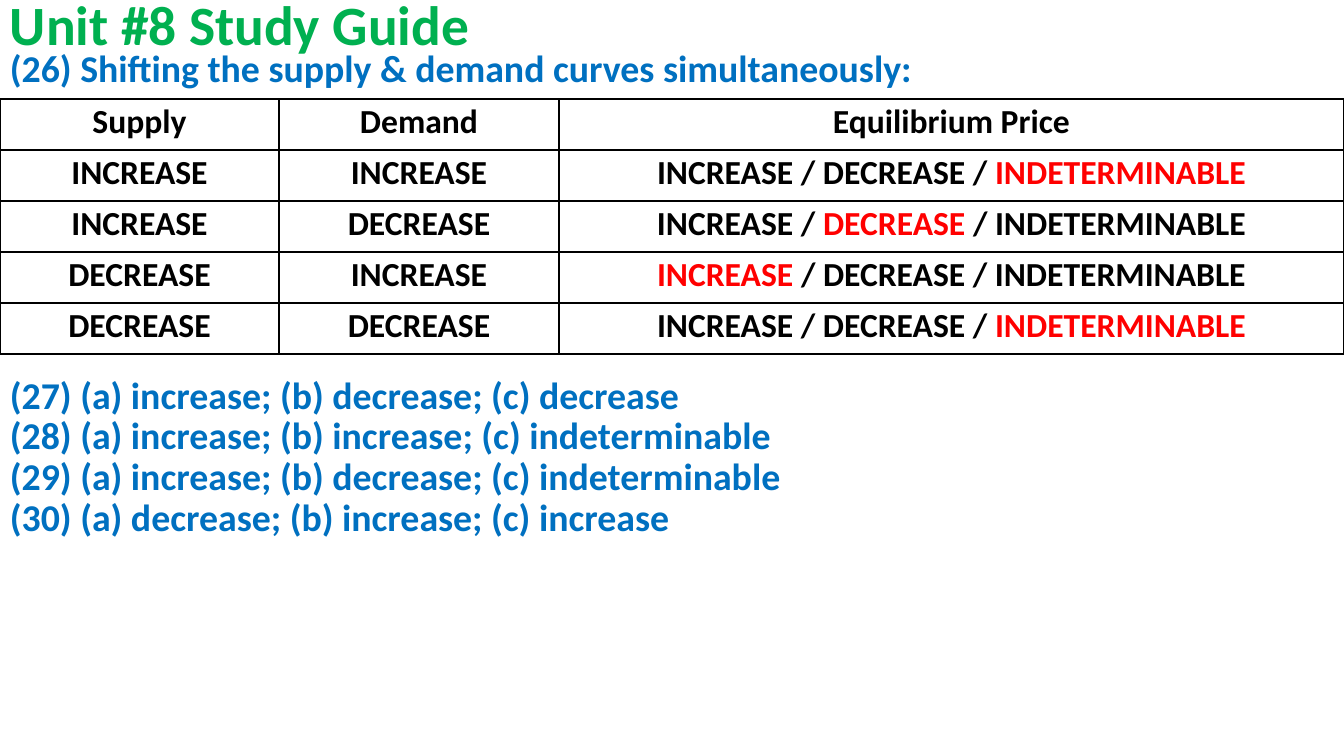
from dataclasses import dataclass

from lxml import etree
from pptx import Presentation
from pptx import util as u
from pptx.dml.color import RGBColor
from pptx.enum import text
from pptx.oxml import ns

WIDE, HIGH = 1344, 756
SCALE = 12192000 / WIDE
FONT = "Calibri"
GREEN = RGBColor(0x00, 0xB0, 0x50)
BLUE = RGBColor(0x00, 0x70, 0xC0)
BLACK = RGBColor(0x00, 0x00, 0x00)
RED = RGBColor(0xFF, 0x00, 0x00)
UP, DOWN, OPEN = "INCREASE", "DECREASE", "INDETERMINABLE"
CHOICES = (UP, DOWN, OPEN)
HEADS = ("Supply", "Demand", "Equilibrium Price")
COLS = (279, 280, 785)
ROW = 51
TABLE_TOP = 99
GAP = 204


@dataclass(frozen=True)
class Block:
    """A full-width text box and its lines."""
    top: int
    height: int
    size: float
    color: RGBColor
    anchor: text.MSO_ANCHOR
    lines: tuple[str, ...]


@dataclass(frozen=True)
class Shift:
    """One pair of curve shifts and the resulting price."""
    supply: str
    demand: str
    price: str


TITLE = Block(0, 54, 39.6, GREEN, text.MSO_ANCHOR.MIDDLE, ("Unit #8 Study Guide",))
BODY = Block(45, HIGH - 45, 27, BLUE, text.MSO_ANCHOR.TOP, (
    "(26) Shifting the supply & demand curves simultaneously:",
    "(27) (a) increase; (b) decrease; (c) decrease",
    "(28) (a) increase; (b) increase; (c) indeterminable",
    "(29) (a) increase; (b) decrease; (c) indeterminable",
    "(30) (a) decrease; (b) increase; (c) increase",
))
SHIFTS = (
    Shift(UP, UP, OPEN),
    Shift(UP, DOWN, DOWN),
    Shift(DOWN, UP, UP),
    Shift(DOWN, DOWN, OPEN),
)


def px(n: int) -> u.Emu:
    """Turn px into EMU."""
    return u.Emu(round(n * SCALE))


def style(para, size: float, color: RGBColor, space: float) -> None:
    """Set the font and line spacing of a paragraph."""
    font = para.font
    font.name, font.size, font.bold = FONT, u.Pt(size), True
    font.color.rgb = color
    para.line_spacing = space


def write(slide, block: Block):
    """Add a text block and return its paragraphs."""
    box = slide.shapes.add_textbox(0, px(block.top), px(WIDE), px(block.height))
    frame = box.text_frame
    frame.word_wrap = True
    frame.vertical_anchor = block.anchor
    frame.text = "\n".join(block.lines)
    for para in frame.paragraphs:
        style(para, block.size, block.color, 0.9)
    return frame.paragraphs


def border(cell) -> None:
    """Draw a thin black line on all sides of a cell."""
    props = cell._tc.get_or_add_tcPr()
    for side in ("a:lnL", "a:lnR", "a:lnT", "a:lnB"):
        line = etree.SubElement(props, ns.qn(side), w=str(u.Pt(1)))
        fill = etree.SubElement(line, ns.qn("a:solidFill"))
        etree.SubElement(fill, ns.qn("a:srgbClr"), val=str(BLACK))


def fill_cell(cell, words: tuple[str, ...], answer: str = "") -> None:
    """Write words parted by slashes, with the answer in red."""
    border(cell)
    cell.fill.background()
    cell.margin_left = cell.margin_right = px(7)
    cell.margin_top = cell.margin_bottom = 0
    para = cell.text_frame.paragraphs[0]
    style(para, 24, BLACK, 1.07)
    para.alignment = text.PP_ALIGN.CENTER
    for i, word in enumerate(words):
        if i:
            para.add_run().text = " / "
        run = para.add_run()
        run.text = word
        if word == answer:
            run.font.color.rgb = RED


def draw_table(slide) -> None:
    """Add the table of curve shifts."""
    count = len(SHIFTS) + 1
    table = slide.shapes.add_table(
        count, len(COLS), 0, px(TABLE_TOP), px(WIDE), px(ROW * count)).table
    table.first_row = table.horz_banding = False
    for col, width in zip(table.columns, COLS):
        col.width = px(width)
    for row in table.rows:
        row.height = px(ROW)
    for c, head in enumerate(HEADS):
        fill_cell(table.cell(0, c), (head,))
    for r, shift in enumerate(SHIFTS, 1):
        fill_cell(table.cell(r, 0), (shift.supply,))
        fill_cell(table.cell(r, 1), (shift.demand,))
        fill_cell(table.cell(r, 2), CHOICES, shift.price)


def main() -> None:
    """Build and save the study guide slide."""
    deck = Presentation()
    deck.slide_width, deck.slide_height = px(WIDE), px(HIGH)
    slide = deck.slides.add_slide(deck.slide_layouts[6])
    write(slide, TITLE)
    paras = write(slide, BODY)
    paras[1].space_before = u.Pt(GAP)
    draw_table(slide)
    deck.save("out.pptx")


if __name__ == "__main__":
    main()
